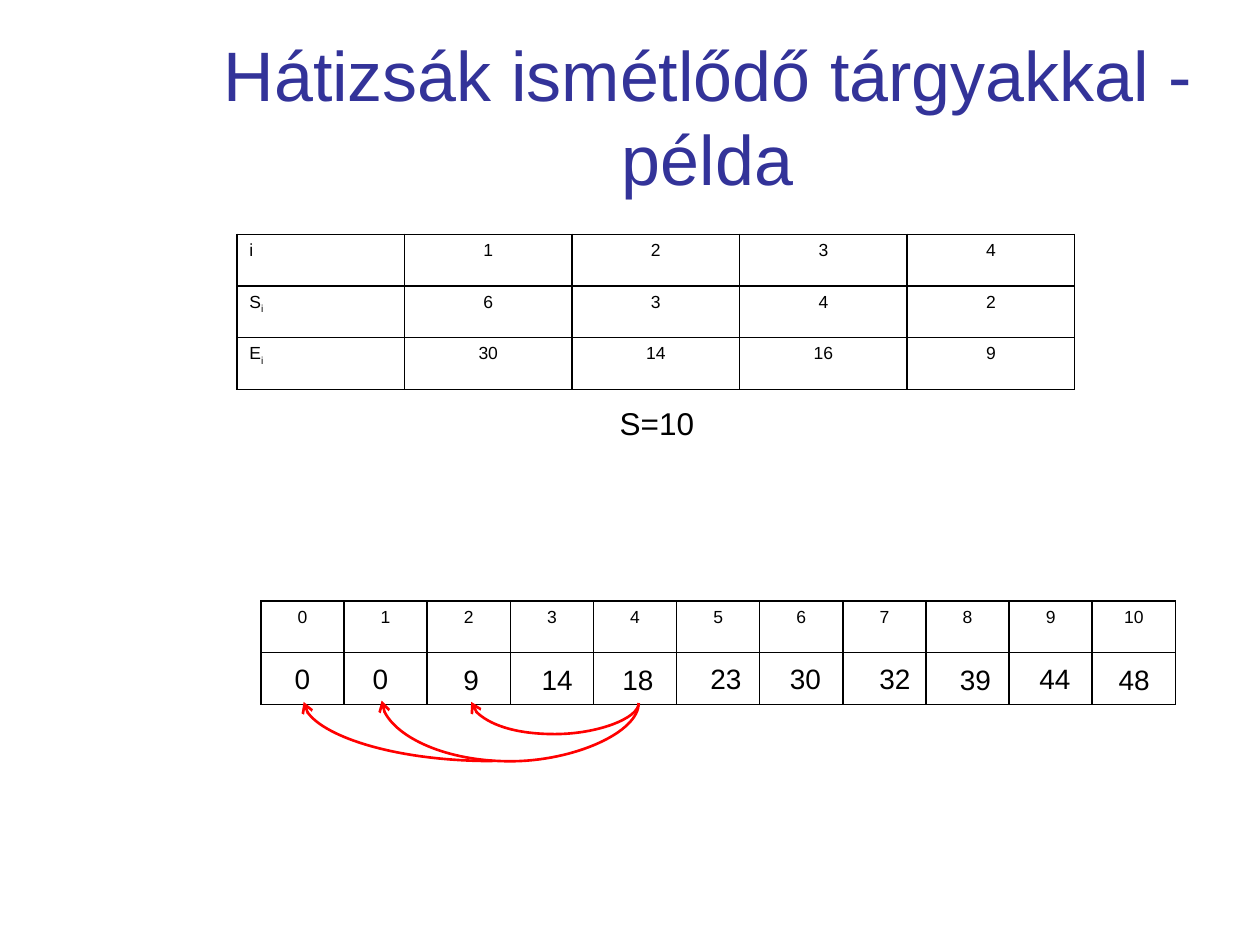
from dataclasses import dataclass
from typing import Any

import pptx
import pptx.dml.color
import pptx.enum.dml
import pptx.enum.shapes
import pptx.enum.text
import pptx.oxml
import pptx.oxml.ns
import pptx.util

Inches = pptx.util.Inches
Pt = pptx.util.Pt
qn = pptx.oxml.ns.qn
RGB = pptx.dml.color.RGBColor.from_string
Align = pptx.enum.text.PP_ALIGN
Anchor = pptx.enum.text.MSO_ANCHOR
AutoSize = pptx.enum.text.MSO_AUTO_SIZE
Connector = pptx.enum.shapes.MSO_CONNECTOR


@dataclass(frozen=True)
class Theme:
    font: str = "Arial"
    ink: str = "000000"
    title: str = "333399"
    arrow: str = "FF0000"
    title_size: float = 40
    capacity_size: float = 18
    value_size: float = 16
    cell_size: float = 10
    border: float = 1
    arrow_width: float = 1.5


@dataclass(frozen=True)
class Grid:
    left: float
    top: float
    column: float
    row: float
    rows: list[list[str]]
    labelled: bool = False


@dataclass(frozen=True)
class Best:
    value: str
    left: float
    top: float = 5.2


@dataclass(frozen=True)
class Arc:
    left: float
    top: float
    width: float
    height: float
    rotation: int
    preset: str
    mirrored: bool = False
    bend: float | None = None


THEME = Theme()

ITEMS = Grid(1.88, 1.86, 1.33, 0.41, [
    ["i", "1", "2", "3", "4"],
    ["S_i", "6", "3", "4", "2"],
    ["E_i", "30", "14", "16", "9"],
], labelled=True)

CAPACITIES = Grid(2.07, 4.77, 0.66, 0.41,
                  [[str(capacity) for capacity in range(11)], [""] * 11])

BESTS = [
    Best("0", 2.24), Best("0", 2.86), Best("9", 3.58, 5.21), Best("14", 4.2, 5.21),
    Best("18", 4.84, 5.21), Best("23", 5.54), Best("30", 6.17), Best("32", 6.88),
    Best("39", 7.52, 5.21), Best("44", 8.15), Best("48", 8.78, 5.21),
]

ARCS = [
    Arc(4.4, 4.91, 0.01, 1.33, 90, "curvedConnector3", True, -25),
    Arc(4.04, 4.55, 0.02, 2.04, 90, "curvedConnector3", True, -23),
    Arc(2.41, 5.57, 1.5, 0.47, 180, "curvedConnector2"),
]


def write_text(frame: Any, text: str, *, size: float, color: str = THEME.ink,
               align: Any = Align.LEFT) -> None:
    paragraph = frame.paragraphs[0]
    paragraph.alignment = align
    paragraph.font.size = Pt(size)
    base, _, subscript = text.partition("_")
    for part, offset in ((base, None), (subscript, "-25000")):
        if part:
            run = paragraph.add_run()
            run.text = part
            run.font.name = THEME.font
            run.font.size = Pt(size)
            run.font.color.rgb = RGB(color)
            if offset:
                run.font._element.set("baseline", offset)


def add_label(slide: Any, text: str, left: float, top: float, width: float,
              height: float, *, wrap: bool = False, anchor: Any = Anchor.TOP,
              **text_format: Any) -> None:
    frame = slide.shapes.add_textbox(
        Inches(left), Inches(top), Inches(width), Inches(height)).text_frame
    frame.word_wrap = wrap
    frame.auto_size = AutoSize.NONE if wrap else AutoSize.SHAPE_TO_FIT_TEXT
    frame.vertical_anchor = anchor
    write_text(frame, text, **text_format)


def outline_cell(cell: Any) -> None:
    properties = cell._tc.get_or_add_tcPr()
    for position, side in enumerate(("lnL", "lnR", "lnT", "lnB")):
        border = pptx.oxml.parse_xml(
            f'<a:{side} xmlns:a="http://schemas.openxmlformats.org/drawingml/2006/main"'
            f' w="{Pt(THEME.border)}"><a:solidFill><a:srgbClr val="{THEME.ink}"/>'
            f'</a:solidFill></a:{side}>')
        properties.insert(position, border)


def add_grid(slide: Any, grid: Grid) -> None:
    row_count, column_count = len(grid.rows), len(grid.rows[0])
    table = slide.shapes.add_table(
        row_count, column_count, Inches(grid.left), Inches(grid.top),
        Inches(grid.column * column_count), Inches(grid.row * row_count)).table
    table.first_row = False
    table.horz_banding = False
    for column in table.columns:
        column.width = Inches(grid.column)
    for row, texts in zip(table.rows, grid.rows):
        row.height = Inches(grid.row)
        for index, (cell, text) in enumerate(zip(row.cells, texts)):
            is_label = grid.labelled and index == 0
            cell.fill.background()
            outline_cell(cell)
            write_text(cell.text_frame, text, size=THEME.cell_size,
                       align=Align.LEFT if is_label else Align.CENTER)


def add_arc(slide: Any, arc: Arc) -> None:
    start, end = arc.left, arc.left + arc.width
    if arc.mirrored:
        start, end = end, start
    curve = slide.shapes.add_connector(
        Connector.CURVE, Inches(start), Inches(arc.top),
        Inches(end), Inches(arc.top + arc.height))
    curve.line.color.rgb = RGB(THEME.arrow)
    curve.line.width = Pt(THEME.arrow_width)
    properties = curve._element.spPr
    properties.find(qn("a:xfrm")).set("rot", str(arc.rotation * 60000))
    geometry = properties.find(qn("a:prstGeom"))
    geometry.set("prst", arc.preset)
    if arc.bend is not None:
        guide = pptx.oxml.parse_xml(
            '<a:gd xmlns:a="http://schemas.openxmlformats.org/drawingml/2006/main"'
            f' name="adj1" fmla="val {round(arc.bend * 100000)}"/>')
        geometry.find(qn("a:avLst")).append(guide)
    tail = properties.find(qn("a:ln")).makeelement(qn("a:tailEnd"), {"type": "arrow"})
    properties.find(qn("a:ln")).append(tail)
    properties.append(properties.makeelement(qn("a:effectLst"), {}))


def main() -> None:
    deck = pptx.Presentation()
    deck.slide_width = Inches(10)
    deck.slide_height = Inches(7.5)
    slide = deck.slides.add_slide(deck.slide_layouts[6])

    add_label(slide, "Hátizsák ismétlődő tárgyakkal - példa", 1.07, 0.29, 9.09, 1.25,
              wrap=True, anchor=Anchor.MIDDLE, size=THEME.title_size,
              color=THEME.title, align=Align.CENTER)
    add_grid(slide, ITEMS)
    add_label(slide, "S=10", 4.82, 3.16, 0.8, 0.4, size=THEME.capacity_size)
    add_grid(slide, CAPACITIES)
    for best in BESTS:
        width = 0.21 + 0.12 * len(best.value)
        add_label(slide, best.value, best.left, best.top, width, 0.37,
                  size=THEME.value_size)
    for arc in ARCS:
        add_arc(slide, arc)

    deck.save("out.pptx")


if __name__ == "__main__":
    main()
